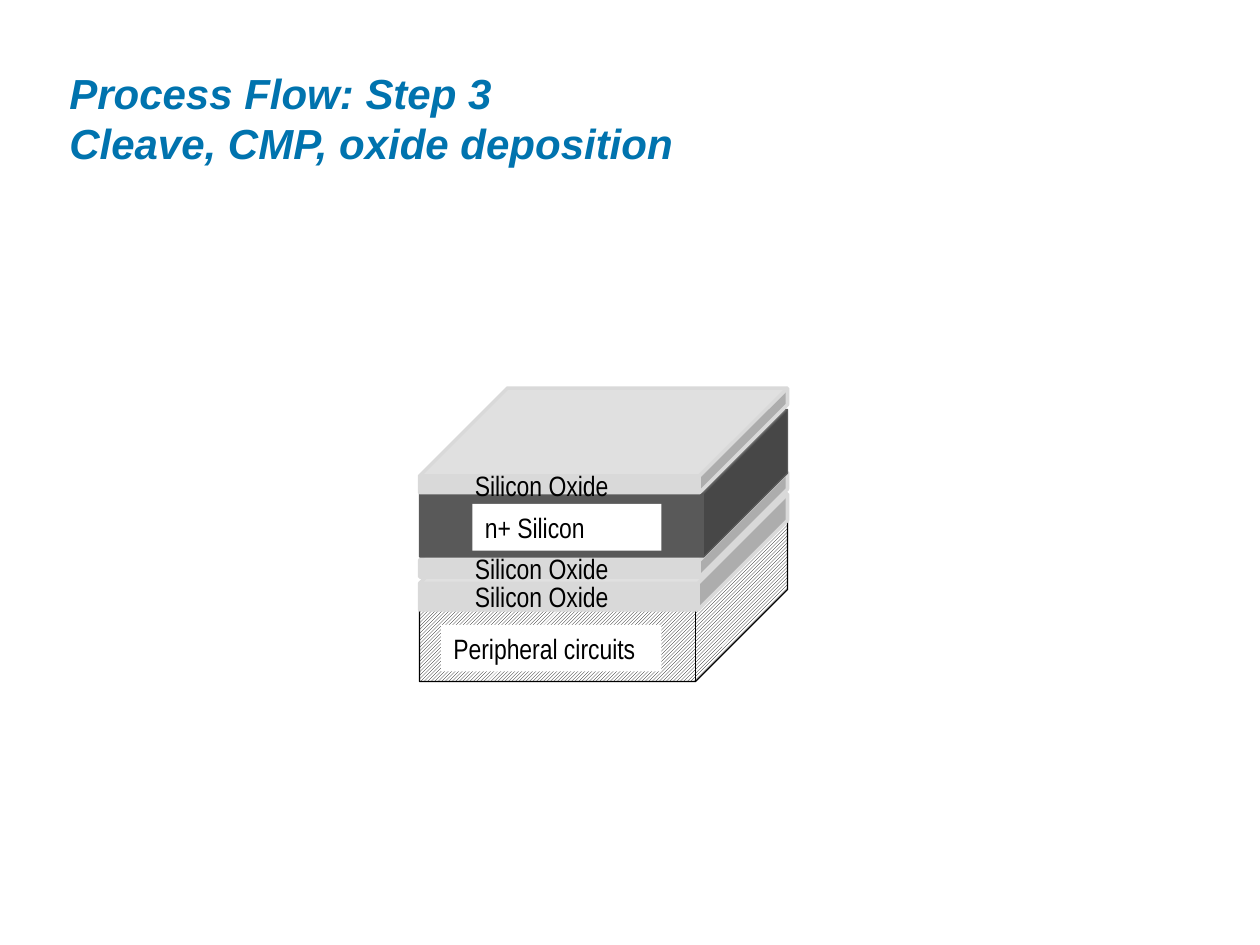
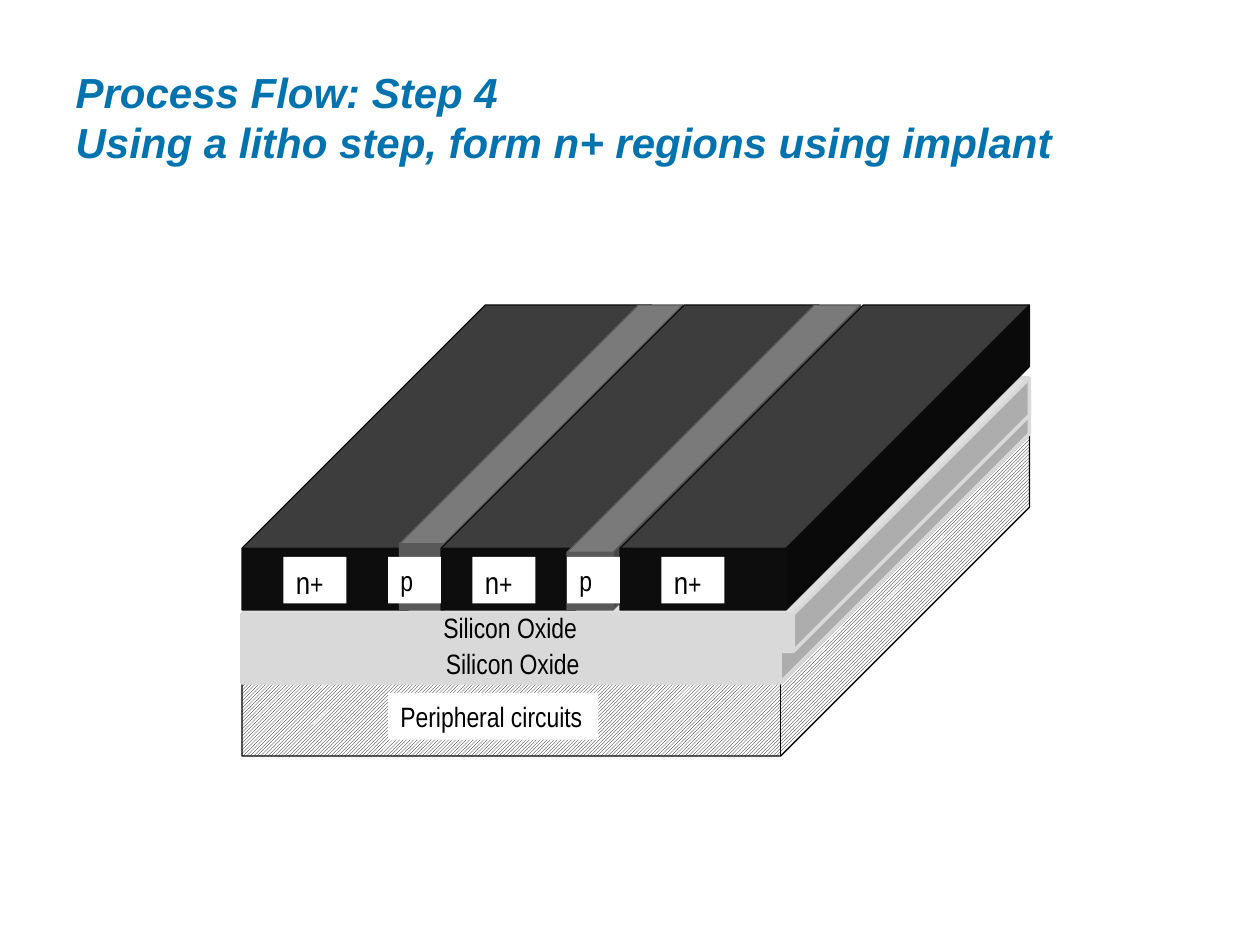
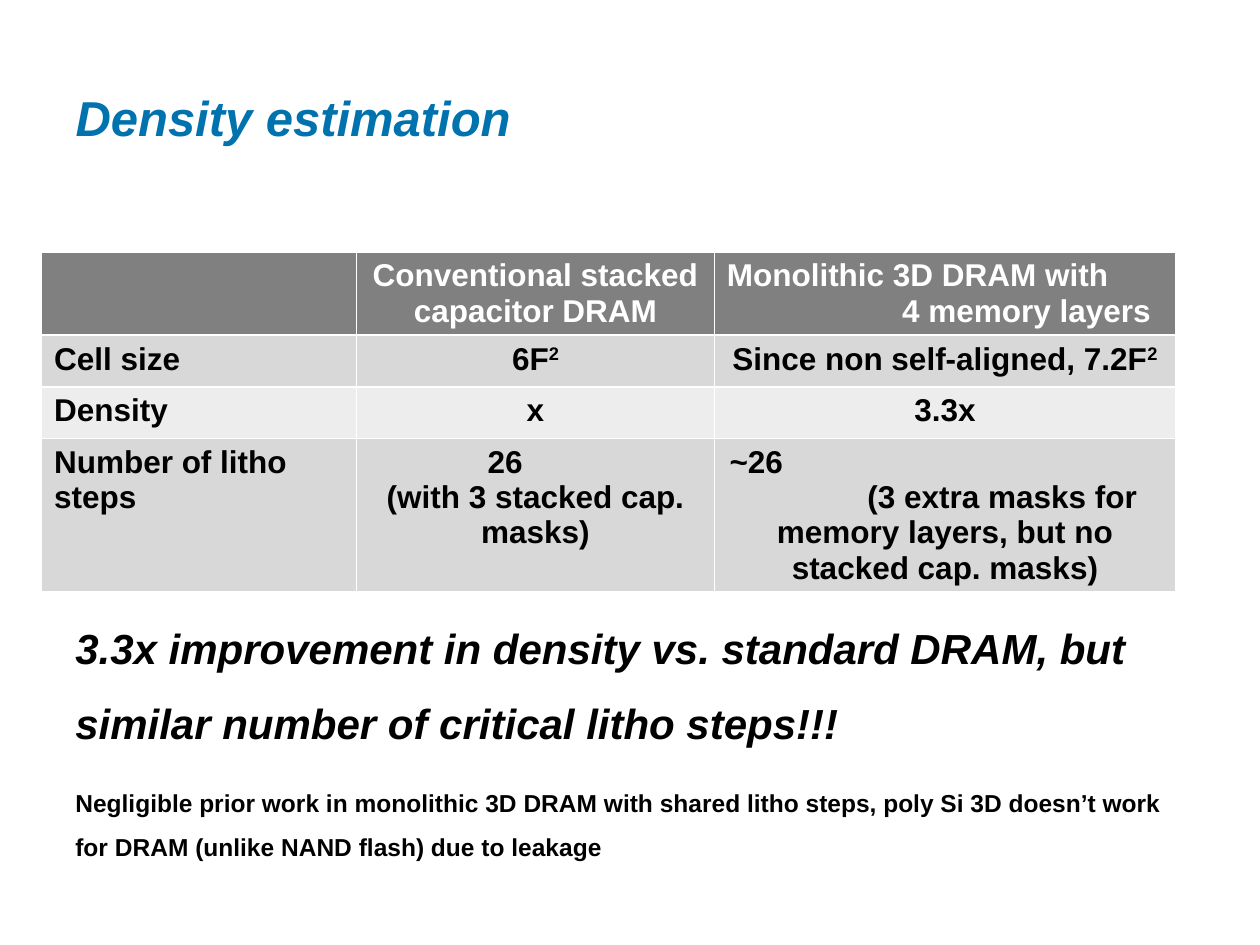
"""Build three slides on a layered DRAM process and its density."""
from dataclasses import dataclass

from pptx import Presentation
from pptx.dml.color import RGBColor as Rgb
from pptx.enum.dml import MSO_PATTERN as Pattern
from pptx.enum.shapes import MSO_SHAPE as Shape
from pptx.enum.text import MSO_ANCHOR as Anchor, MSO_AUTO_SIZE as Fit, PP_ALIGN as Align
from pptx.util import Inches, Pt

COLORS = {
    "title": "0073AE", "ink": "000000", "paper": "FFFFFF", "oxide": "D9D9D9",
    "gray": "595959", "dark": "0D0D0D", "head": "808080", "odd": "D8D8D8", "even": "EDEDED",
}
BODY, NARROW = "Arial", "Arial Narrow"
HIGH = 0.37


@dataclass
class Cube:
    left: float
    top: float
    width: float
    height: float
    depth: float
    color: str
    line: float = 0.75


@dataclass
class Label:
    text: str
    left: float
    top: float
    width: float
    filled: bool = True
    size: int = 16
    tail: str = ""


@dataclass
class Para:
    text: str
    align: Align = Align.CENTER
    left: float = 0
    indent: float = 0


def rgb(name: str) -> Rgb:
    return Rgb.from_string(COLORS[name])


def style(para, name: str, size: float, color: str, bold=False, italic=False) -> None:
    font = para.font
    font.name, font.size = name, Pt(size)
    font.bold, font.italic = bold, italic
    font.color.rgb = rgb(color)


def add_slide(deck, title: str, left=0.5, top=0.3, size=24):
    slide = deck.slides.add_slide(deck.slide_layouts[5])
    box = slide.shapes.title
    box.left, box.top, box.width, box.height = map(Inches, (left, top, 9, 1.25))
    frame = box.text_frame
    frame.text = title
    frame.auto_size, frame.vertical_anchor = Fit.NONE, Anchor.MIDDLE
    para = frame.paragraphs[0]
    para.alignment = Align.LEFT
    style(para, BODY, size, "title", True, True)
    return slide


def draw_cube(slide, cube: Cube) -> None:
    box = map(Inches, (cube.left, cube.top, cube.width, cube.height))
    shape = slide.shapes.add_shape(Shape.CUBE, *box)
    shape.shadow.inherit = False
    shape.adjustments[0] = cube.depth
    fill = shape.fill
    if cube.color == "hatch":
        fill.patterned()
        fill.pattern = Pattern.DARK_UPWARD_DIAGONAL
        fill.fore_color.rgb, fill.back_color.rgb = rgb("ink"), rgb("paper")
    else:
        fill.solid()
        fill.fore_color.rgb = rgb(cube.color)
    shape.line.color.rgb = rgb("ink" if cube.color == "hatch" else cube.color)
    shape.line.width = Pt(cube.line)


def draw_label(slide, label: Label) -> None:
    box = list(map(Inches, (label.left, label.top, label.width, HIGH)))
    if label.filled:
        shape = slide.shapes.add_shape(Shape.RECTANGLE, *box)
        shape.shadow.inherit = False
        shape.fill.solid()
        shape.fill.fore_color.rgb = rgb("paper")
        shape.line.fill.background()
    else:
        shape = slide.shapes.add_textbox(*box)
    frame = shape.text_frame
    frame.word_wrap, frame.auto_size = True, Fit.SHAPE_TO_FIT_TEXT
    frame.vertical_anchor = Anchor.TOP
    para = frame.paragraphs[0]
    para.alignment = Align.LEFT
    para.add_run().text = label.text
    style(para, NARROW, label.size, "ink")
    if label.tail:
        run = para.add_run()
        run.text, run.font.size = label.tail, Pt(16)


def draw_all(slide, items: list) -> None:
    for item in items:
        (draw_cube if isinstance(item, Cube) else draw_label)(slide, item)


def fill_cell(cell, paras: list[Para], fill: str, ink: str) -> None:
    cell.fill.solid()
    cell.fill.fore_color.rgb = rgb(fill)
    frame = cell.text_frame
    for i, part in enumerate(paras):
        para = frame.add_paragraph() if i else frame.paragraphs[0]
        para.alignment = part.align
        props = para._p.get_or_add_pPr()
        if part.left or part.indent:
            props.set("marL", str(Inches(part.left)))
            props.set("indent", str(Inches(part.indent)))
        base, _, power = part.text.partition("^")
        para.add_run().text = base
        if power:
            run = para.add_run()
            run.text = power
            run._r.get_or_add_rPr().set("baseline", "30000")
        style(para, BODY, 18, ink, True)


def draw_table(slide, rows: list, widths: list[float], heights: list[float]) -> None:
    box = map(Inches, (0.33, 2, sum(widths), sum(heights)))
    table = slide.shapes.add_table(len(rows), len(widths), *box).table
    for col, width in zip(table.columns, widths):
        col.width = Inches(width)
    for r, (row, height) in enumerate(zip(rows, heights)):
        table.rows[r].height = Inches(height)
        fill = "head" if r == 0 else "odd" if r % 2 else "even"
        for c, paras in enumerate(row):
            fill_cell(table.cell(r, c), paras, fill, "ink" if r else "paper")


def build_cleave(deck) -> None:
    left, width = 3.33, 2.92
    slide = add_slide(deck, "Process Flow: Step 3\vCleave, CMP, oxide deposition", 0.45, 0.31)
    draw_all(slide, [
        Cube(left, 4.08, width, 1.33, 0.549, "hatch"),
        Cube(left, 3.92, width, 0.92, 0.772, "oxide", 2),
        Label("Silicon Oxide", 3.67, 4.55, 2.25, False),
        Label("Peripheral circuits", 3.5, 4.96, 1.75),
        Cube(left, 3.75, width, 0.83, 0.841, "oxide", 2),
        Label("Silicon Oxide", 3.67, 4.33, 2.25, False),
        Cube(left, 3.25, width, 1.17, 0.568, "gray"),
        Label("n+ Silicon", 3.75, 4, 1.5),
        Cube(left, 3.08, width, 0.83, 0.841, "oxide", 2),
        Label("Silicon Oxide", 3.67, 3.67, 2.25, False),
    ])


def build_implant(deck) -> None:
    left, width = 1.92, 6.25
    slide = add_slide(deck, "Process Flow: Step 4\vUsing a litho step, form n+ regions using implant")
    draw_all(slide, [
        Cube(left, 3.42, width, 2.58, 0.765, "hatch"),
        Cube(left, 3.17, width, 2.25, 0.879, "oxide", 2),
        Label("Silicon Oxide", 3.44, 5.08, 2.89, False),
        Label("Peripheral circuits", 3.08, 5.5, 1.67),
        Cube(left, 3, width, 2.17, 0.864, "oxide", 2),
        Label("Silicon Oxide", 3.42, 4.8, 2.89, False),
    ])
    bars = [(1.92, 3.25, "dark"), (3.17, 2.25, "gray"), (3.5, 3, "dark"),
            (4.5, 2.33, "gray"), (4.92, 3.25, "dark")]
    for x, wide, color in bars:
        draw_cube(slide, Cube(x, 2.42, wide, 2.42, 0.798 if color == "dark" else 0.843, color))
    draw_all(slide, [Label("p", x, 4.42, 0.42) for x in (3.08, 4.5)])
    draw_all(slide, [Label("n", x, 4.42, 0.5, size=18, tail="+") for x in (2.25, 3.75, 5.25)])


def build_density(deck) -> None:
    slide = add_slide(deck, "Density estimation", size=28)
    start = Align.LEFT
    rows = [
        [[], [Para("Conventional stacked capacitor DRAM")],
         [Para("Monolithic 3D DRAM with", start), Para("4 memory layers", start, 1.39)]],
        [[Para("Cell size", start)], [Para("6F^2")], [Para("Since non self-aligned, 7.2F^2")]],
        [[Para("Density", start)], [Para("x")], [Para("3.3x")]],
        [[Para("Number of litho steps", start)],
         [Para("26", start, 0.94), Para("(with 3 stacked cap. masks)")],
         [Para("~26", start, 0.02),
          Para("(3 extra masks for memory layers, but no stacked cap. masks)", indent=0.91)]],
    ]
    draw_table(slide, rows, [2.5, 2.84, 3.66], [0.65, 0.41, 0.41, 1.21])
    box = slide.shapes.add_textbox(*map(Inches, (0.5, 4.69, 8.83, 2.18)))
    frame = box.text_frame
    frame.word_wrap, frame.auto_size = True, Fit.SHAPE_TO_FIT_TEXT
    claim, note = frame.paragraphs[0], frame.add_paragraph()
    claim.text = ("3.3x improvement in density vs. standard DRAM, "
                  "but similar number of critical litho steps!!!")
    note.text = ("Negligible prior work in monolithic 3D DRAM with shared litho steps, "
                 "poly Si 3D doesn’t work for DRAM (unlike NAND flash) due to leakage")
    claim.line_spacing = note.line_spacing = 1.5
    note.space_before = Pt(14)
    style(claim, BODY, 24, "ink", True, True)
    style(note, BODY, 14, "ink", True)


def main() -> None:
    deck = Presentation()
    deck.slide_width, deck.slide_height = Inches(10), Inches(7.5)
    for build in (build_cleave, build_implant, build_density):
        build(deck)
    deck.save("out.pptx")


if __name__ == "__main__":
    main()
